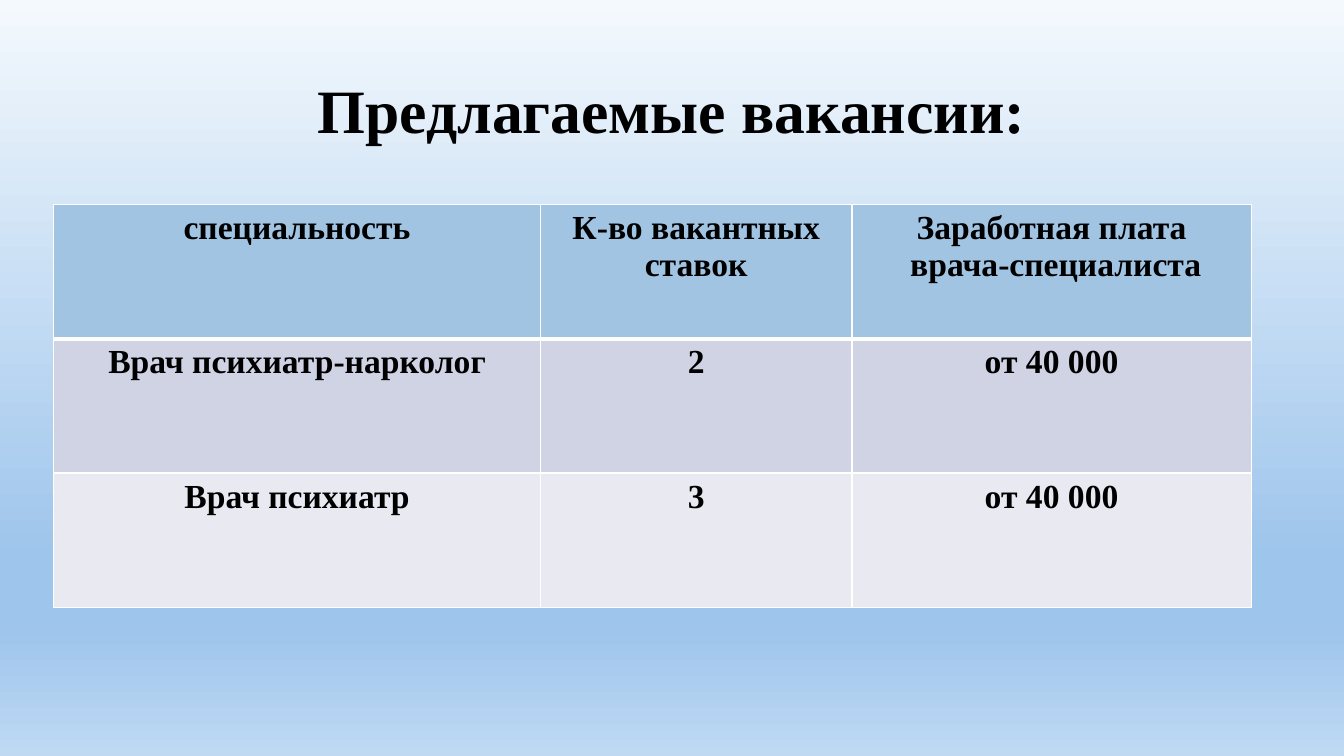
import pptx
import pptx.util
import pptx.dml.color
import pptx.enum.text
import pptx.oxml.ns
import lxml.etree

Cm = pptx.util.Cm
Pt = pptx.util.Pt
qn = pptx.oxml.ns.qn

COLORS = {
    "text": "000000",
    "border": "FFFFFF",
    "header": "A1C4E3",
    "odd_row": "D0D3E3",
    "even_row": "E9EAF1",
}
BACKGROUND_STOPS = {0: "F4F9FD", 74: "9EC5EC", 83: "9EC5EC", 100: "BFD9F3"}


def write_text(frame, text, size):
    frame.text = text
    for para in frame.paragraphs:
        para.alignment = pptx.enum.text.PP_ALIGN.CENTER
        for span in para.runs:
            span.font.name = "Times New Roman"
            span.font.size = Pt(size)
            span.font.bold = True
            span.font.color.rgb = pptx.dml.color.RGBColor.from_string(COLORS["text"])


def add_border(cell, side, width):
    properties = cell._tc.get_or_add_tcPr()
    line = lxml.etree.SubElement(properties, qn("a:ln" + side), w=str(Pt(width)))
    fill = lxml.etree.SubElement(line, qn("a:solidFill"))
    lxml.etree.SubElement(fill, qn("a:srgbClr"), val=COLORS["border"])


deck = pptx.Presentation()
deck.slide_width = Cm(33.87)
deck.slide_height = Cm(19.05)
page = deck.slides.add_slide(deck.slide_layouts[6])

# Background gradient, top to bottom
background = page.background.fill
background.gradient()
background.gradient_angle = 270
stops = page.element.find(".//" + qn("a:gsLst"))
for stop in list(stops):
    stops.remove(stop)
for position, color in BACKGROUND_STOPS.items():
    stop = lxml.etree.SubElement(stops, qn("a:gs"), pos=str(position * 1000))
    lxml.etree.SubElement(stop, qn("a:srgbClr"), val=color)

# Title
title = page.shapes.add_textbox(Cm(2.33), Cm(1.01), Cm(29.21), Cm(3.68))
title.text_frame.word_wrap = True
title.text_frame.vertical_anchor = pptx.enum.text.MSO_ANCHOR.MIDDLE
write_text(title.text_frame, "Предлагаемые вакансии:", 44)
title.text_frame.paragraphs[0].line_spacing = 0.9

# Vacancy table
vacancies = [
    ["специальность", "К-во вакантных\nставок", "Заработная плата\n врача-специалиста"],
    ["Врач психиатр-нарколог", "2", "от 40 000"],
    ["Врач психиатр", "3", "от 40 000"],
]
row_colors = ["header", "odd_row", "even_row"]
column_widths = [12.27, 7.85, 10.06]
row_height = 3.38

table = page.shapes.add_table(
    len(vacancies), len(column_widths), Cm(1.35), Cm(5.16),
    Cm(sum(column_widths)), Cm(row_height * len(vacancies)),
).table
table.first_row = False
table.horz_banding = False
for column, width in zip(table.columns, column_widths):
    column.width = Cm(width)

for row_index, vacancy in enumerate(vacancies):
    table.rows[row_index].height = Cm(row_height)
    for column_index, text in enumerate(vacancy):
        cell = table.cell(row_index, column_index)
        write_text(cell.text_frame, text, 24)
        # A thick rule parts the header from the body
        top = 3 if row_index == 1 else 1
        bottom = 3 if row_index == 0 else 1
        for side, width in {"L": 1, "R": 1, "T": top, "B": bottom}.items():
            add_border(cell, side, width)
        cell.fill.solid()
        cell.fill.fore_color.rgb = pptx.dml.color.RGBColor.from_string(
            COLORS[row_colors[row_index]])

deck.save("out.pptx")
